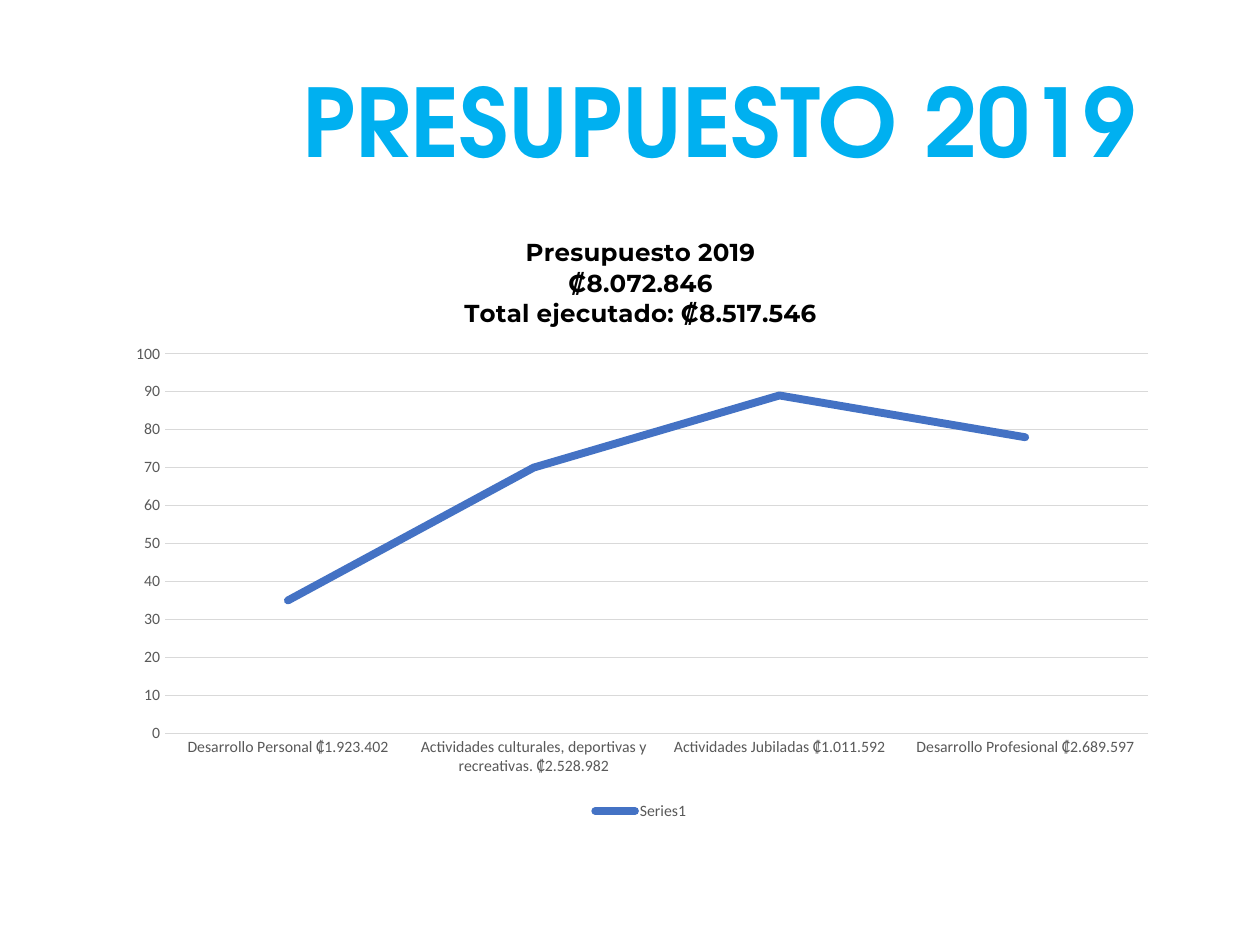
import pptx
import pptx.chart.data
import pptx.dml.color
import pptx.enum.chart
import pptx.enum.text
import pptx.oxml
import pptx.oxml.ns
import pptx.util

Inches = pptx.util.Inches
Pt = pptx.util.Pt
RGBColor = pptx.dml.color.RGBColor
enum = pptx.enum.chart

SKY = RGBColor(0x00, 0xB0, 0xF0)
BLUE = RGBColor(0x44, 0x72, 0xC4)
BLACK = RGBColor(0, 0, 0)
GRAY = RGBColor(0x59, 0x59, 0x59)
PALE = RGBColor(0xD9, 0xD9, 0xD9)

HEAD = "PRESUPUESTO 2019"
TOTALS = "Presupuesto 2019\n₡8.072.846\nTotal ejecutado: ₡8.517.546"
SPENT = [
    ("Desarrollo Personal ₡1.923.402", 35),
    ("Actividades culturales, deportivas y recreativas. ₡2.528.982", 70),
    ("Actividades Jubiladas ₡1.011.592", 89),
    ("Desarrollo Profesional ₡2.689.597", 78),
]
PLOT = {"x": 0.05, "y": 0.23, "w": 0.93, "h": 0.62}


def style(font, name, size, color, bold=False):
    font.name = name
    font.size = Pt(size)
    font.color.rgb = color
    font.bold = bold


def rule(line, color, width):
    line.color.rgb = color
    line.width = Pt(width)


def place(chart, area):
    sizes = "".join(f'<c:{key} val="{val}"/>' for key, val in area.items())
    layout = pptx.oxml.parse_xml(
        f'<c:layout {pptx.oxml.ns.nsdecls("c")}><c:manualLayout>'
        '<c:layoutTarget val="inner"/><c:xMode val="edge"/><c:yMode val="edge"/>'
        f"{sizes}</c:manualLayout></c:layout>"
    )
    plot = chart.element.find(".//" + pptx.oxml.ns.qn("c:plotArea"))
    for old in plot.findall(pptx.oxml.ns.qn("c:layout")):
        plot.remove(old)
    plot.insert(0, layout)


def add_head(slide):
    title = slide.shapes.title
    title.left, title.top = Inches(1.69), Inches(0.55)
    title.width, title.height = Inches(8.04), Inches(0.92)
    frame = title.text_frame
    frame.text = HEAD
    frame.word_wrap = True
    frame.vertical_anchor = pptx.enum.text.MSO_ANCHOR.MIDDLE
    para = frame.paragraphs[0]
    para.alignment = pptx.enum.text.PP_ALIGN.CENTER
    para.line_spacing = 0.9
    style(para.runs[0].font, "TeX Gyre Adventor", 54, SKY, True)


def add_graph(slide):
    data = pptx.chart.data.CategoryChartData()
    data.categories = [name for name, _ in SPENT]
    data.add_series("Series1", [val for _, val in SPENT])
    chart = slide.shapes.add_chart(
        enum.XL_CHART_TYPE.LINE,
        Inches(0.89), Inches(1.69), Inches(8.39), Inches(4.86), data,
    ).chart
    style(chart.font, "Calibri", 10, BLACK)

    chart.has_title = True
    frame = chart.chart_title.text_frame
    frame.text = TOTALS
    for para in frame.paragraphs:
        style(para.runs[0].font, "Montserrat", 14, BLACK, True)
    chart.chart_title.include_in_layout = False
    place(chart, PLOT)

    for axis in (chart.category_axis, chart.value_axis):
        axis.major_tick_mark = enum.XL_TICK_MARK.NONE
        axis.minor_tick_mark = enum.XL_TICK_MARK.NONE
        style(axis.tick_labels.font, "Calibri", 9, GRAY)
    rule(chart.category_axis.format.line, PALE, 0.75)
    scale = chart.value_axis
    scale.minimum_scale, scale.maximum_scale, scale.major_unit = 0, 100, 10
    scale.format.line.fill.background()
    scale.has_major_gridlines = True
    rule(scale.major_gridlines.format.line, PALE, 0.75)

    chart.has_legend = True
    chart.legend.position = enum.XL_LEGEND_POSITION.BOTTOM
    chart.legend.include_in_layout = False
    style(chart.legend.font, "Calibri", 9, GRAY)

    plot = chart.plots[0]
    plot.vary_by_categories = False
    series = plot.series[0]
    series.smooth = False
    series.marker.style = enum.XL_MARKER_STYLE.NONE
    rule(series.format.line, BLUE, 4.5)
    series.format.line._get_or_add_ln().set("cap", "rnd")


def main():
    deck = pptx.Presentation()
    deck.slide_width, deck.slide_height = Inches(10), Inches(7.5)
    slide = deck.slides.add_slide(deck.slide_layouts[5])
    add_head(slide)
    add_graph(slide)
    deck.save("out.pptx")


if __name__ == "__main__":
    main()
